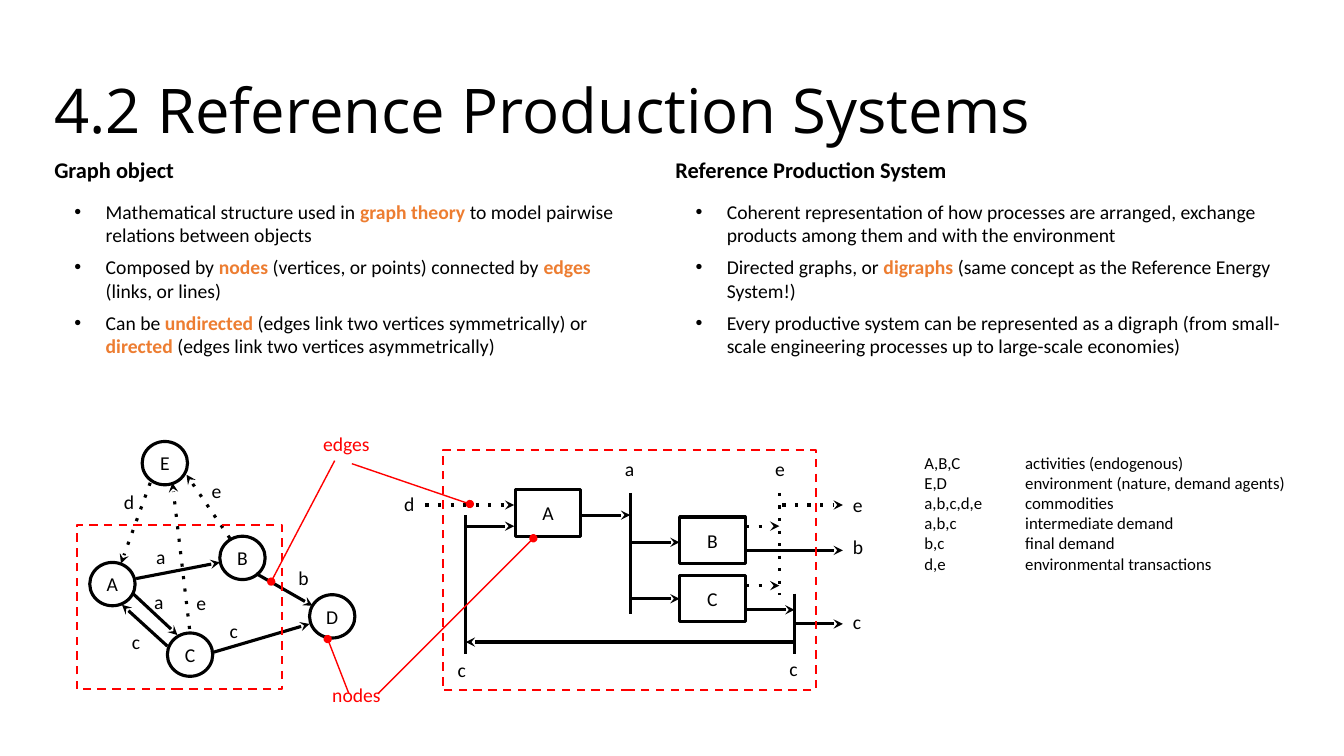
"""Build the slide on reference production systems, with a graph and its block diagram."""
from lxml.etree import SubElement
from pptx import Presentation
from pptx.dml.color import RGBColor
from pptx.enum.shapes import MSO_CONNECTOR, MSO_SHAPE
from pptx.enum.text import MSO_ANCHOR, MSO_AUTO_SIZE, PP_ALIGN
from pptx.oxml.ns import qn
from pptx.util import Inches, Pt

BLACK = RGBColor(0x00, 0x00, 0x00)
RED = RGBColor(0xFF, 0x00, 0x00)
ORANGE = RGBColor(0xED, 0x7D, 0x31)

TITLE = "4.2 Reference Production Systems"
COLUMNS = [
    ((0.44, 1.5, 5.88, 2.12), "Graph object", [
        "Mathematical structure used in |graph theory |to model pairwise relations between objects",
        "Composed by |nodes| (vertices, or points) connected by |edges| (links, or lines)",
        "Can be |undirected| (edges link two vertices symmetrically) or "
        "|directed| (edges link two vertices asymmetrically)",
    ]),
    ((6.6, 1.5, 6.35, 2.12), "Reference Production System", [
        "Coherent representation of how processes are arranged, exchange products "
        "among them and with the environment",
        "Directed graphs, or |digraphs| (same concept as the Reference Energy System!)",
        "Every productive system can be represented as a digraph "
        "(from small-scale engineering processes up to large-scale economies)",
    ]),
]
LEGEND = [
    ("A,B,C", "activities (endogenous)"),
    ("E,D", "environment (nature, demand agents)"),
    ("a,b,c,d,e", "commodities"),
    ("a,b,c", "intermediate demand"),
    ("b,c", "final demand"),
    ("d,e", "environmental transactions"),
]

NODE_SIZE = (0.45, 0.43)
NODES = {"A": (0.89, 5.58), "B": (2.18, 5.32), "C": (1.66, 6.28), "D": (3.07, 5.9), "E": (1.41, 4.38)}
BLOCK_SIZE = (0.65, 0.46)
BLOCKS = {"A": (5.11, 4.86), "B": (6.74, 5.13), "C": (6.74, 5.71)}

FEED, BLOCK_A, BLOCK_A_END, BUS_A, BLOCK_BC, BLOCK_BC_END, BUS_E, BUS_C, OUT = (
    4.62, 5.1, 5.75, 6.25, 6.74, 7.4, 7.73, 7.88, 8.36)
ENVIRONMENT_ROW, BUS_TOP, BUS_BOTTOM, RETURN_ROW = 5.01, 4.89, 6.49, 6.37

SOLID_EDGES = [
    (1.32, 5.89, 1.76, 6.3), (1.35, 5.74, 2.18, 5.58), (1.66, 6.41, 1.21, 6),
    (2.12, 6.47, 3.07, 6.19), (2.54, 5.69, 3.1, 6.01),
    (BLOCK_A_END, 5.11, BUS_A, 5.11), (BUS_A, 5.38, BLOCK_BC, 5.38),
    (BUS_A, 5.94, BLOCK_BC, 5.94), (BLOCK_BC_END, 5.46, OUT, 5.46),
    (BLOCK_BC_END, 6.05, BUS_C, 6.05), (BUS_C, RETURN_ROW, FEED, RETURN_ROW),
    (FEED, 5.22, BLOCK_A, 5.22), (BUS_C, 6.19, OUT, 6.19),
]
DOTTED_EDGES = [
    (1.49, 4.79, 1.2, 5.59), (2.28, 5.34, 1.85, 4.71), (1.88, 6.24, 1.71, 4.79),
    (4.22, ENVIRONMENT_ROW, BLOCK_A, ENVIRONMENT_ROW), (BLOCK_BC_END, 5.22, BUS_E, 5.22),
    (BLOCK_BC_END, 5.81, BUS_E, 5.81), (7.76, ENVIRONMENT_ROW, OUT, ENVIRONMENT_ROW),
]
SOLID_BUSES = [
    (BUS_A, BUS_TOP, BUS_A, 6.09), (BUS_C, 5.89, BUS_C, BUS_BOTTOM), (FEED, 5.11, FEED, BUS_BOTTOM),
]
DOTTED_BUSES = [(BUS_E, BUS_TOP, BUS_E, 5.9)]
POINTERS = [
    (3.25, 6.34, 3.46, 6.88), (5.29, 5.34, 3.75, 6.88),
    (2.69, 5.77, 3.32, 4.57), (4.66, 5, 3.49, 4.6),
]
COMMODITY_LABELS = {
    "a": [(1.43, 5.8), (1.45, 5.36), (6.1, 4.48)],
    "b": [(2.86, 5.57), (OUT, 5.26)],
    "c": [(1.21, 6.2), (2.18, 6.09), (4.44, 6.48), (7.73, 6.47), (OUT, 6)],
    "d": [(1.13, 4.81), (3.91, 4.83)],
    "e": [(1.85, 5.81), (2, 4.7), (7.59, 4.48), (OUT, 4.84)],
}
FRAMES = [(4.39, 4.46, 3.7, 2.39), (0.76, 5.21, 2.04, 1.63)]
CALLOUTS = {"nodes": (2.89, 6.73), "edges": (2.79, 4.24)}


def apply_format(target, **values):
    for name, value in values.items():
        setattr(target, name, value)


def add_run(paragraph, text, size, color=BLACK, bold=False, name="Calibri"):
    run = paragraph.add_run()
    run.text = text
    apply_format(run.font, size=Pt(size), bold=bold, name=name)
    run.font.color.rgb = color


def add_text_box(slide, box, **frame_format):
    frame = slide.shapes.add_textbox(*map(Inches, box)).text_frame
    apply_format(frame, **{"word_wrap": True, "auto_size": MSO_AUTO_SIZE.SHAPE_TO_FIT_TEXT, **frame_format})
    return frame


def add_label(slide, text, position, width=0.28, color=BLACK, alignment=PP_ALIGN.LEFT):
    paragraph = add_text_box(slide, (*position, width, 0.34)).paragraphs[0]
    paragraph.alignment = alignment
    add_run(paragraph, text, 14, color)


def format_line(shape, color, width, dash=None, **ends):
    shape.line.color.rgb = color
    shape.line.width = Pt(width)
    properties = shape.element.spPr
    outline = properties.find(qn("a:ln"))
    if dash:
        SubElement(outline, qn("a:prstDash"), val=dash)
    for end, kind in ends.items():
        SubElement(outline, qn(f"a:{end}"), type=kind)


def add_lines(slide, lines, color=BLACK, width=2.25, dash=None, **ends):
    for line in lines:
        connector = slide.shapes.add_connector(MSO_CONNECTOR.STRAIGHT, *map(Inches, line))
        format_line(connector, color, width, dash, **ends)
        SubElement(connector.element.spPr, qn("a:effectLst"))


def add_outline(slide, kind, box, color, width, dash=None):
    shape = slide.shapes.add_shape(kind, *map(Inches, box))
    shape.fill.background()
    format_line(shape, color, width, dash)
    shape.shadow.inherit = False
    return shape


def add_lettered_shapes(slide, kind, positions, size):
    for letter, position in positions.items():
        shape = add_outline(slide, kind, (*position, *size), BLACK, 2.25)
        shape.text_frame.vertical_anchor = MSO_ANCHOR.MIDDLE
        paragraph = shape.text_frame.paragraphs[0]
        paragraph.alignment = PP_ALIGN.CENTER
        add_run(paragraph, letter, 14)


def add_bullet(paragraph):
    properties = paragraph._p.get_or_add_pPr()
    properties.set("marL", str(Inches(0.51)))
    properties.set("indent", str(Inches(-0.31)))
    bullet_color = SubElement(properties, qn("a:buClr"))
    SubElement(bullet_color, qn("a:srgbClr"), val=str(BLACK))
    SubElement(properties, qn("a:buFont"), typeface="Arial")
    SubElement(properties, qn("a:buChar"), char="•")


def add_column(slide, box, heading, bullets):
    frame = add_text_box(slide, box)
    add_run(frame.paragraphs[0], heading, 16, bold=True)
    for index, bullet in enumerate(bullets):
        paragraph = frame.add_paragraph()
        add_bullet(paragraph)
        paragraph.space_before = Pt(6 if index else 12)
        for part, text in enumerate(bullet.split("|")):
            emphasised = part % 2 == 1
            add_run(paragraph, text, 14, ORANGE if emphasised else BLACK, emphasised)


def add_legend(slide):
    frame = add_text_box(slide, (9.07, 4.44, 4.13, 1.31))
    for index, entry in enumerate(LEGEND):
        paragraph = frame.add_paragraph() if index else frame.paragraphs[0]
        tabs = SubElement(paragraph._p.get_or_add_pPr(), qn("a:tabLst"))
        SubElement(tabs, qn("a:tab"), pos=str(Inches(1)), algn="l")
        add_run(paragraph, "\t".join(entry), 12)


def main():
    presentation = Presentation()
    apply_format(presentation, slide_width=Inches(13.33), slide_height=Inches(7.5))
    slide = presentation.slides.add_slide(presentation.slide_layouts[6])
    title = add_text_box(slide, (0.44, 0.01, 11.33, 1.5),
                         auto_size=MSO_AUTO_SIZE.NONE, vertical_anchor=MSO_ANCHOR.BOTTOM)
    title.paragraphs[0].line_spacing = 0.9
    add_run(title.paragraphs[0], TITLE, 44, name="Open Sans")
    for column in COLUMNS:
        add_column(slide, *column)
    add_legend(slide)
    add_lettered_shapes(slide, MSO_SHAPE.OVAL, NODES, NODE_SIZE)
    add_lettered_shapes(slide, MSO_SHAPE.RECTANGLE, BLOCKS, BLOCK_SIZE)
    add_lines(slide, SOLID_EDGES, tailEnd="stealth")
    add_lines(slide, DOTTED_EDGES, dash="dot", tailEnd="stealth")
    add_lines(slide, SOLID_BUSES)
    add_lines(slide, DOTTED_BUSES, dash="dot")
    for commodity, positions in COMMODITY_LABELS.items():
        for position in positions:
            add_label(slide, commodity, position)
    for frame in FRAMES:
        add_outline(slide, MSO_SHAPE.RECTANGLE, frame, RED, 1.5, "dash")
    add_lines(slide, POINTERS, RED, 1, headEnd="oval")
    for callout, position in CALLOUTS.items():
        add_label(slide, callout, position, 1.29, RED, PP_ALIGN.CENTER)
    presentation.save("out.pptx")


if __name__ == "__main__":
    main()
